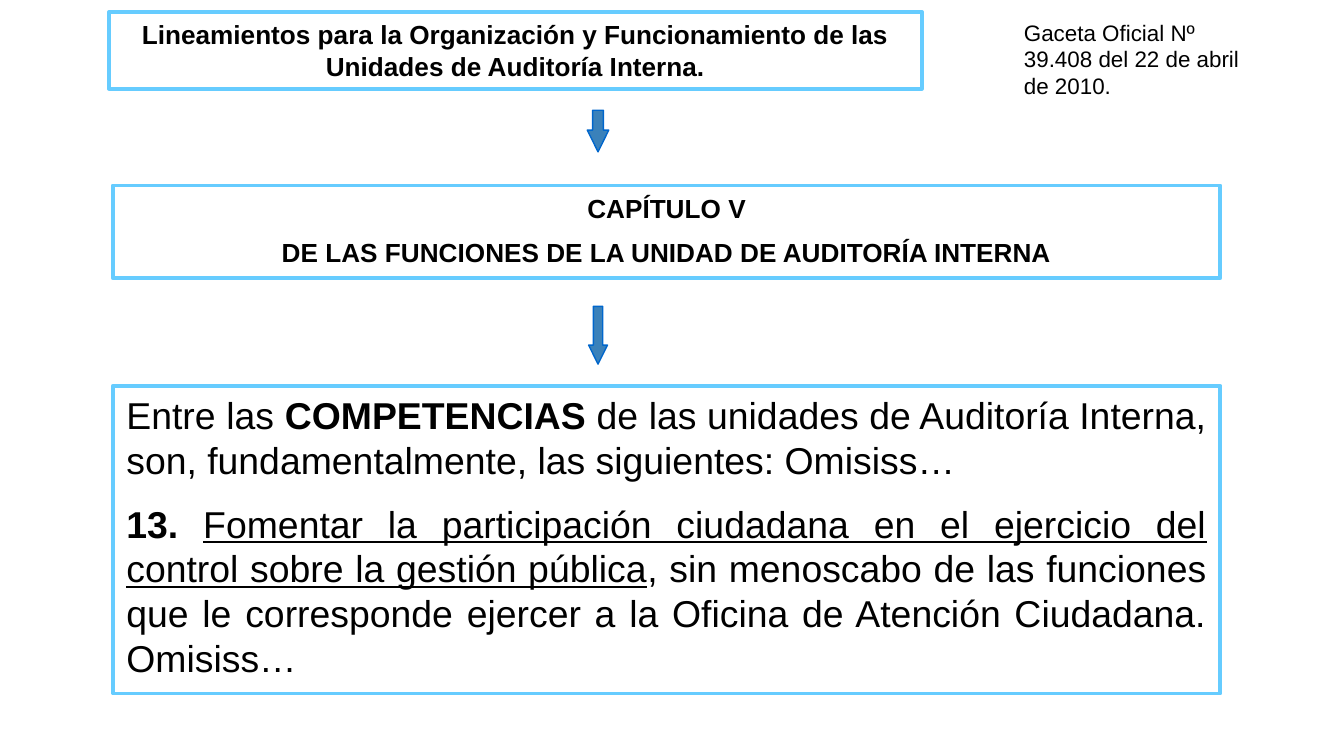
from pptx import Presentation
from pptx.dml.color import RGBColor
from pptx.enum.shapes import MSO_SHAPE as SHAPE
from pptx.enum.text import MSO_ANCHOR as ANCHOR, MSO_AUTO_SIZE as AUTOSIZE, PP_ALIGN as ALIGN
from pptx.util import Inches, Pt
from lxml import etree

COLORS = {"text": "000000", "border": "66CCFF", "arrow": "3A81BA", "arrow_edge": "0066CC"}
DRAWING_NS = "{http://schemas.openxmlformats.org/drawingml/2006/main}"


def place(shape, left, top, width, height):
    shape.left, shape.top = Inches(left), Inches(top)
    shape.width, shape.height = Inches(width), Inches(height)


def write(shape, paragraphs, size=14, align=ALIGN.LEFT, bold=False, border=None):
    frame = shape.text_frame
    frame.word_wrap = True
    frame.auto_size = AUTOSIZE.NONE
    frame.vertical_anchor = ANCHOR.TOP
    for index, parts in enumerate(paragraphs):
        paragraph = frame.add_paragraph() if index else frame.paragraphs[0]
        paragraph.alignment = align
        paragraph.space_before = Pt(size / 2 if index else 0)
        properties = paragraph._p.get_or_add_pPr()
        properties.set("marL", "0")
        properties.set("indent", "0")
        etree.SubElement(properties, DRAWING_NS + "buNone")
        for text, style in parts:
            run = paragraph.add_run()
            run.text = text
            run.font.name = "Arial"
            run.font.size = Pt(size)
            run.font.bold = bold or style == "bold"
            run.font.underline = style == "underline"
            run.font.color.rgb = RGBColor.from_string(COLORS["text"])
    if border:
        shape.line.color.rgb = RGBColor.from_string(COLORS[border])
        shape.line.width = Pt(2)


deck = Presentation()
deck.slide_width = Inches(10)
deck.slide_height = deck.slide_width * 9 // 16
slide = deck.slides.add_slide(deck.slide_layouts[1])
guidelines, duties = slide.placeholders

place(guidelines, 0.81, 0.09, 6.05, 0.57)
write(guidelines, [[("Lineamientos para la Organización y Funcionamiento de las Unidades de Auditoría Interna.", None)]],
      align=ALIGN.CENTER, bold=True, border="border")

chapter = slide.shapes.add_shape(SHAPE.RECTANGLE, Inches(0.84), Inches(1.38), Inches(8.24), Inches(0.69))
chapter.shadow.inherit = False
chapter.fill.background()
write(chapter, [[("CAPÍTULO V", None)],
                [("DE LAS FUNCIONES DE LA UNIDAD DE AUDITORÍA INTERNA", None)]],
      align=ALIGN.CENTER, bold=True, border="border")

place(duties, 0.84, 2.87, 8.24, 2.29)
write(duties, [
    [("Entre las ", None),
     ("COMPETENCIAS", "bold"),
     (" de las unidades de Auditoría Interna, son, fundamentalmente, las siguientes: Omisiss…", None)],
    [("13. ", "bold"),
     ("Fomentar la participación ciudadana en el ejercicio del control sobre la gestión pública", "underline"),
     (", sin menoscabo de las funciones que le corresponde ejercer a la Oficina de Atención Ciudadana. Omisiss…", None)],
], size=20, align=ALIGN.JUSTIFY, border="border")

gazette = slide.shapes.add_textbox(Inches(7.52), Inches(0.09), Inches(1.81), Inches(0.71))
write(gazette, [[("Gaceta Oficial Nº 39.408 del 22 de abril de 2010.", None)]], size=12)

for left, top, width, height in [(4.37, 0.82, 0.16, 0.31), (4.38, 2.28, 0.14, 0.43)]:
    arrow = slide.shapes.add_shape(SHAPE.DOWN_ARROW, Inches(left), Inches(top), Inches(width), Inches(height))
    arrow.adjustments[0], arrow.adjustments[1] = 0.5, 1.01
    arrow.shadow.inherit = False
    arrow.fill.solid()
    arrow.fill.fore_color.rgb = RGBColor.from_string(COLORS["arrow"])
    arrow.line.color.rgb = RGBColor.from_string(COLORS["arrow_edge"])
    arrow.line.width = Pt(0.75)

deck.save("out.pptx")
